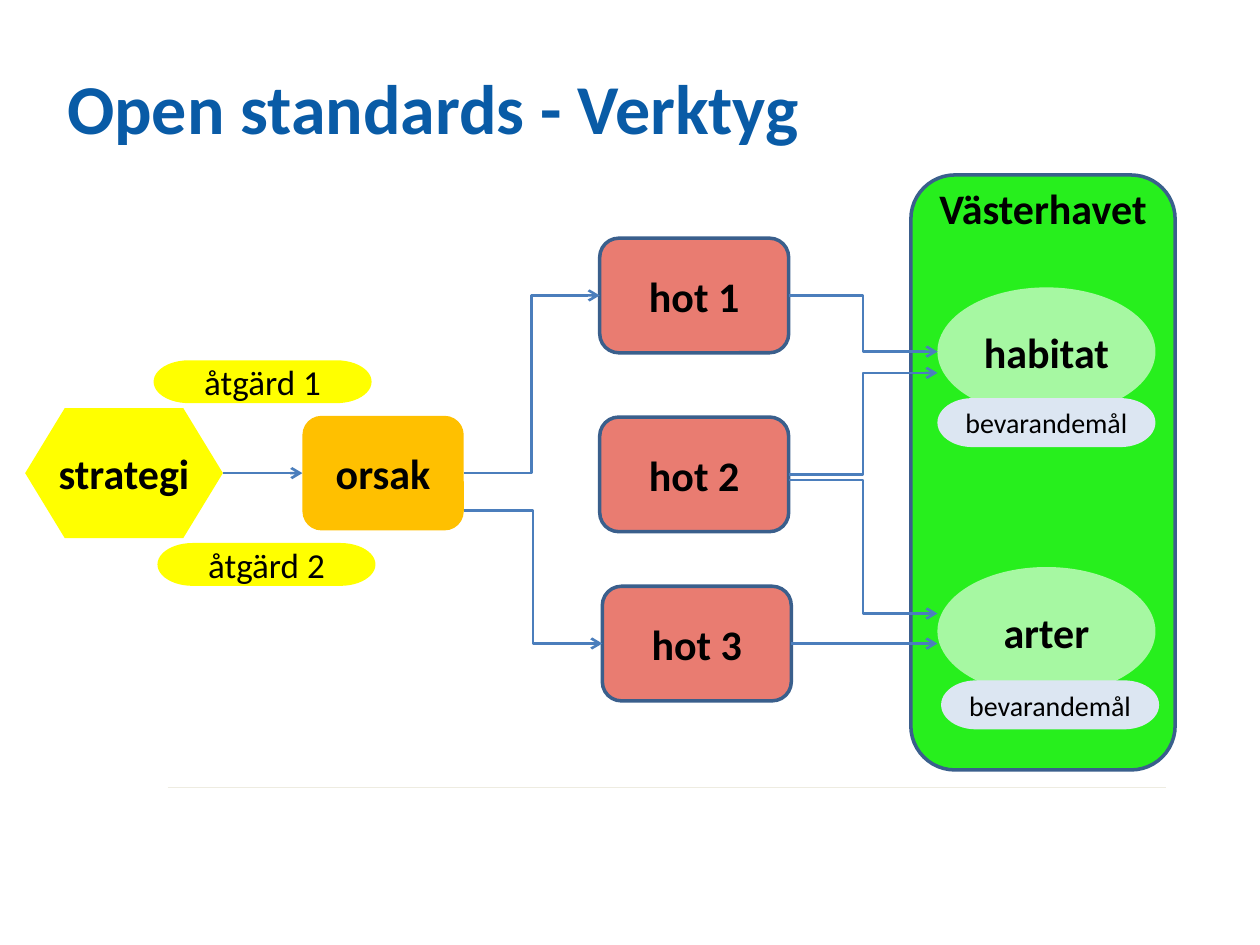
from lxml import etree
from pptx import Presentation
from pptx import util as u
from pptx.dml import color
from pptx.enum import shapes, text
from pptx.oxml import ns

Pt = u.Pt
COLORS = {
    "title": "095BA6", "black": "000000", "outline": "3A5F8C",
    "arrow": "4B7EBC", "rule": "EEECE1", "area": "27EF1D",
    "target": "A6F8A2", "threat": "E97C71", "goal": "DCE6F2",
    "cause": "FFC000", "strategy": "FFFF00",
}
KIND = shapes.MSO_SHAPE
LINK = shapes.MSO_CONNECTOR


def rgb(name):
    return color.RGBColor.from_string(COLORS[name])


def add_link(kind, start, end, line_color, width, arrow=True):
    link = page.shapes.add_connector(kind, *[Pt(value) for value in start + end])
    link.line.color.rgb = rgb(line_color)
    link.line.width = Pt(width)
    properties = link._element.spPr
    if arrow:
        line = properties.find(ns.qn("a:ln"))
        etree.SubElement(line, ns.qn("a:tailEnd"), type="arrow")
    etree.SubElement(properties, ns.qn("a:effectLst"))
    return link


deck = Presentation()
deck.slide_width, deck.slide_height = Pt(720), Pt(540)
page = deck.slides.add_slide(deck.slide_layouts[5])

title = page.shapes.title
title.left, title.top, title.width, title.height = Pt(31.2), Pt(27), Pt(674.6), Pt(67.7)
title.text_frame.text = "Open standards - Verktyg"
title.text_frame.vertical_anchor = text.MSO_ANCHOR.MIDDLE
para = title.text_frame.paragraphs[0]
para.alignment = text.PP_ALIGN.LEFT
para.font.name, para.font.size, para.font.bold = "Calibri", Pt(40), True
para.font.color.rgb = rgb("title")

add_link(LINK.STRAIGHT, (95.8, 450), (666, 450), "rule", 0.25, arrow=False)

styles = {
    "area": (KIND.ROUNDED_RECTANGLE, 151, 340, 24, True),
    "target": (KIND.OVAL, 124.6, 73.4, 24, True),
    "threat": (KIND.ROUNDED_RECTANGLE, 108, 65.5, 24, True),
    "goal": (KIND.FLOWCHART_TERMINATOR, 124.6, 28, 16, False),
    "cause": (KIND.ROUNDED_RECTANGLE, 92.2, 65.5, 24, True),
    "action": (KIND.FLOWCHART_TERMINATOR, 124.6, 24.5, 20, False),
    "strategy": (KIND.FLOWCHART_PREPARATION, 113, 74.2, 24, True),
}
nodes = [
    ("area", "Västerhavet", 520.5, 100),
    ("target", "habitat", 535.7, 164.2),
    ("target", "arter", 535.7, 324),
    ("threat", "hot 1", 342.7, 136.1),
    ("threat", "hot 2", 342.7, 238.3),
    ("threat", "hot 3", 344.2, 335),
    ("goal", "bevarandemål", 535.7, 227.5),
    ("goal", "bevarandemål", 537.8, 388.8),
    ("cause", "orsak", 172.8, 237.6),
    ("action", "åtgärd 1", 87.8, 205.9),
    ("action", "åtgärd 2", 90, 310.3),
    ("strategy", "strategi", 14.4, 233.25),
]
boxes = {}
for style, label, left, top in nodes:
    kind, width, height, size, bold = styles[style]
    box = page.shapes.add_shape(kind, Pt(left), Pt(top), Pt(width), Pt(height))
    boxes[label] = box
    box.shadow.inherit = False
    box.fill.solid()
    box.fill.fore_color.rgb = rgb("strategy" if style == "action" else style)
    if style in ("area", "threat"):
        box.line.color.rgb = rgb("outline")
        box.line.width = Pt(2)
    else:
        box.line.fill.background()
    frame = box.text_frame
    frame.word_wrap = False
    frame.margin_left = frame.margin_right = frame.margin_top = frame.margin_bottom = 0
    frame.vertical_anchor = text.MSO_ANCHOR.TOP if style == "area" else text.MSO_ANCHOR.MIDDLE
    frame.text = label
    para = frame.paragraphs[0]
    para.alignment = text.PP_ALIGN.CENTER
    para.font.name, para.font.size, para.font.bold = "Calibri", Pt(size), bold
    para.font.color.rgb = rgb("black")

boxes["Västerhavet"].text_frame.margin_top = Pt(-3)

links = [
    (LINK.ELBOW, (450.7, 168.85), (535.7, 200.9), "hot 1", None),
    (LINK.ELBOW, (450.7, 271.05), (535.7, 213.1), "hot 2", None),
    (LINK.ELBOW, (450.7, 274.3), (535.7, 350.6), None, None),
    (LINK.STRAIGHT, (452.2, 367.75), (535.7, 367.75), "hot 3", None),
    (LINK.ELBOW, (265, 270.35), (342.7, 168.85), "orsak", "hot 1"),
    (LINK.ELBOW, (265, 291.6), (344.2, 367.75), None, "hot 3"),
    (LINK.STRAIGHT, (127.4, 270.35), (172.8, 270.35), "strategi", "orsak"),
]
for kind, start, end, source, target in links:
    link = add_link(kind, start, end, "arrow", 1.5)
    if source:
        link.begin_connect(boxes[source], 3)
    if target:
        link.end_connect(boxes[target], 1)

deck.save("out.pptx")
